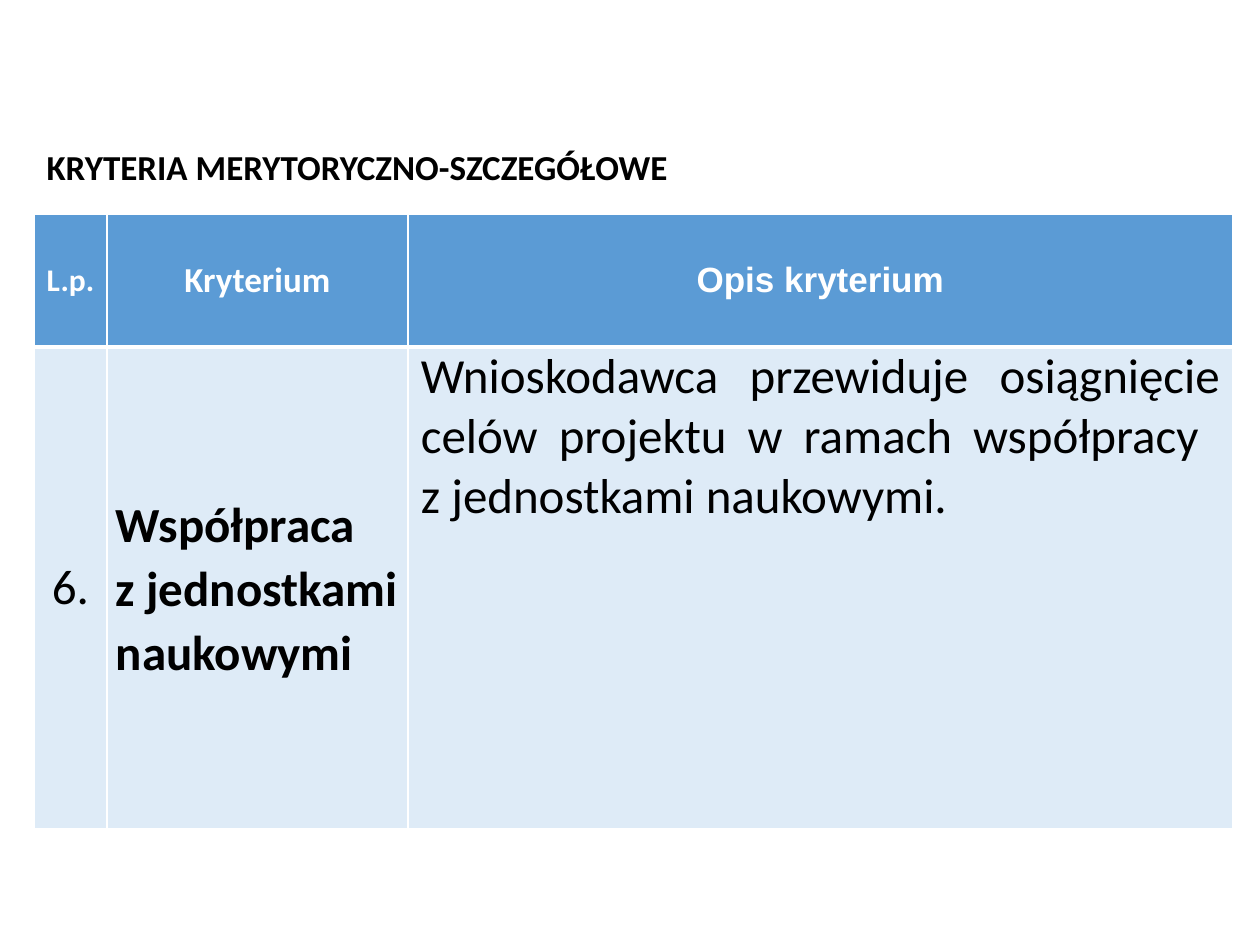
from lxml import etree
from pptx import Presentation
from pptx import util as u
from pptx.dml.color import RGBColor
from pptx.enum import text
from pptx.oxml import ns

PX = u.Inches(1) / 126
LEFT = 34
COLUMNS = [73, 301, 825]
ROWS = [133, 482]
WHITE, BLACK, BLUE, PALE_BLUE = "FFFFFF", "000000", "5B9BD5", "DEEBF7"
CENTER, LEFT_ALIGN, JUSTIFY = (
    text.PP_ALIGN.CENTER, text.PP_ALIGN.LEFT, text.PP_ALIGN.JUSTIFY)
MIDDLE, TOP = text.MSO_ANCHOR.MIDDLE, text.MSO_ANCHOR.TOP


def px(length):
    return u.Emu(round(length * PX))


def color(hex_value):
    return RGBColor.from_string(hex_value)


def write(paragraph, words, size, hex_value, bold, align, font="Calibri"):
    paragraph.text = words
    paragraph.alignment = align
    for run in paragraph.runs:
        run.font.name = font
        run.font.size = u.Pt(size)
        run.font.bold = bold
        run.font.color.rgb = color(hex_value)


def set_borders(cell, bottom_width):
    """Draw white borders; they must precede the fill in the cell properties."""
    properties = cell._tc.get_or_add_tcPr()
    for side, width in (("L", 1), ("R", 1), ("T", 1), ("B", bottom_width)):
        line = etree.SubElement(properties, ns.qn(f"a:ln{side}"), w=str(u.Pt(width)))
        fill = etree.SubElement(line, ns.qn("a:solidFill"))
        etree.SubElement(fill, ns.qn("a:srgbClr"), val=WHITE)


def fill_cell(cell, fill, bottom_width, anchor=MIDDLE):
    set_borders(cell, bottom_width)
    cell.fill.solid()
    cell.fill.fore_color.rgb = color(fill)
    cell.vertical_anchor = anchor


def set_margins(cell, side):
    cell.margin_left = cell.margin_right = px(side)
    cell.margin_top = cell.margin_bottom = 0


def add_title(slide, words):
    title = slide.shapes.title
    title.left, title.top, title.width, title.height = map(px, (LEFT, 139, 651, 55))
    frame = title.text_frame
    frame.word_wrap = False
    frame.auto_size = text.MSO_AUTO_SIZE.SHAPE_TO_FIT_TEXT
    frame.vertical_anchor = MIDDLE
    write(frame.paragraphs[0], words, 20, BLACK, True, LEFT_ALIGN)


def add_criteria_table(slide):
    table = slide.shapes.add_table(
        len(ROWS), len(COLUMNS), px(LEFT), px(214), px(sum(COLUMNS)), px(sum(ROWS))).table
    for column, width in zip(table.columns, COLUMNS):
        column.width = px(width)
    for row, height in zip(table.rows, ROWS):
        row.height = px(height)

    headers = [("L.p.", 18, "Calibri"), ("Kryterium", 20, "Calibri"),
               ("Opis kryterium", 20, "Arial")]
    for cell, (words, size, font) in zip(table.rows[0].cells, headers):
        fill_cell(cell, BLUE, 3)
        write(cell.text_frame.paragraphs[0], words, size, WHITE, True, CENTER, font)

    criterion = [
        ("6.", False, CENTER, MIDDLE),
        ("Współpraca \nz jednostkami naukowymi", True, LEFT_ALIGN, MIDDLE),
        ("Wnioskodawca przewiduje osiągnięcie celów projektu w ramach współpracy \n"
         "z jednostkami naukowymi.", False, JUSTIFY, TOP),
    ]
    for cell, (words, bold, align, anchor) in zip(table.rows[1].cells, criterion):
        fill_cell(cell, PALE_BLUE, 1, anchor)
        write(cell.text_frame.paragraphs[0], words, 28, BLACK, bold, align)

    name, description = table.cell(1, 1), table.cell(1, 2)
    set_margins(name, 9)
    set_margins(description, 13)
    name.text_frame.paragraphs[0].line_spacing = 1.07


def main():
    presentation = Presentation()
    presentation.slide_width, presentation.slide_height = px(1260), px(945)
    slide = presentation.slides.add_slide(presentation.slide_layouts[5])
    add_criteria_table(slide)
    add_title(slide, "KRYTERIA MERYTORYCZNO-SZCZEGÓŁOWE")
    presentation.save("out.pptx")


if __name__ == "__main__":
    main()
